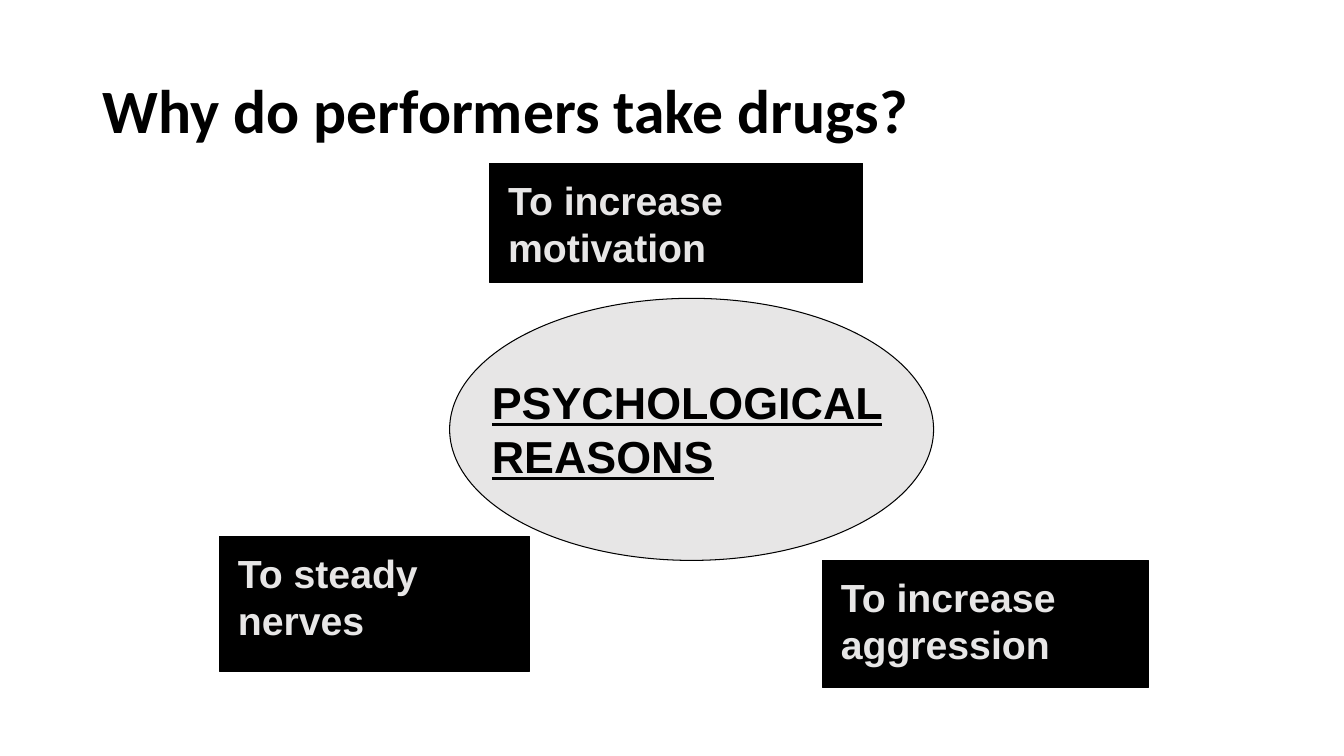
from dataclasses import dataclass

from pptx import Presentation
from pptx.dml.color import RGBColor
from pptx.enum.shapes import MSO_SHAPE as Shape
from pptx.enum.text import MSO_ANCHOR as Anchor, PP_ALIGN as Align
from pptx.util import Inches, Pt

CELL = Inches(1)  # grid of 13.33 columns by 7.5 rows


@dataclass(frozen=True)
class Theme:
    dark: RGBColor = RGBColor(0x00, 0x00, 0x00)
    light: RGBColor = RGBColor(0xE7, 0xE6, 0xE6)
    heading: str = "Calibri"
    body: str = "Arial"
    title_size: int = 44
    centre_size: int = 32
    reason_size: int = 28
    outline: float = 0.75


THEME = Theme()

REASONS = [
    ("To increase motivation", (4.86, 1.62, 3.7, 1.18)),
    ("To steady nerves", (2.18, 5.32, 3.07, 1.34)),
    ("To increase aggression", (8.16, 5.56, 3.23, 1.26)),
]


def on_grid(box):
    return [round(length * CELL) for length in box]


def write(holder, words, anchor, margins=(0.1, 0.05), spacing=1.0, **font_format):
    """Set bold left-aligned words; margins are horizontal and vertical."""
    frame = holder.text_frame
    side, top = on_grid(margins)
    layout = dict(word_wrap=True, vertical_anchor=anchor, margin_left=side,
                  margin_right=side, margin_top=top, margin_bottom=top)
    for key, value in layout.items():
        setattr(frame, key, value)
    paragraph = frame.paragraphs[0]
    paragraph.alignment = Align.LEFT
    paragraph.line_spacing = spacing
    run = paragraph.add_run()
    run.text = words
    colour = font_format.pop("colour")
    for key, value in dict(bold=True, **font_format).items():
        setattr(run.font, key, value)
    run.font.color.rgb = colour


def add_panel(slide, kind, box, fill):
    panel = slide.shapes.add_shape(kind, *on_grid(box))
    panel.shadow.inherit = False
    panel.fill.solid()
    panel.fill.fore_color.rgb = fill
    panel.line.color.rgb = THEME.dark
    panel.line.width = Pt(THEME.outline)
    return panel


def add_title(slide, box):
    title = slide.shapes.add_textbox(*on_grid(box))
    write(title, "Why do performers take drugs?", Anchor.MIDDLE, spacing=0.9,
          name=THEME.heading, size=Pt(THEME.title_size), colour=THEME.dark)


def add_centre(slide, box):
    """Draw the oval with its label, which is wider than the oval's text area."""
    left, top, width, height = box
    add_panel(slide, Shape.OVAL, box, THEME.light)
    label_box = (left + 0.32, top + 0.71, width - 0.55, height - 1.43)
    label = slide.shapes.add_textbox(*on_grid(label_box))
    write(label, "PSYCHOLOGICAL REASONS", Anchor.TOP, name=THEME.body,
          size=Pt(THEME.centre_size), colour=THEME.dark, underline=True)


def add_reason(slide, words, box):
    panel = add_panel(slide, Shape.RECTANGLE, box, THEME.dark)
    write(panel, words, Anchor.TOP, margins=(0.18, 0.13), name=THEME.body,
          size=Pt(THEME.reason_size), colour=THEME.light)


def main():
    deck = Presentation()
    deck.slide_width, deck.slide_height = on_grid((13.33, 7.5))
    slide = deck.slides.add_slide(deck.slide_layouts[6])
    add_title(slide, (0.92, 0.4, 11.5, 1.45))
    add_centre(slide, (4.46, 2.96, 4.8, 2.6))
    for words, box in REASONS:
        add_reason(slide, words, box)
    deck.save("out.pptx")


if __name__ == "__main__":
    main()
